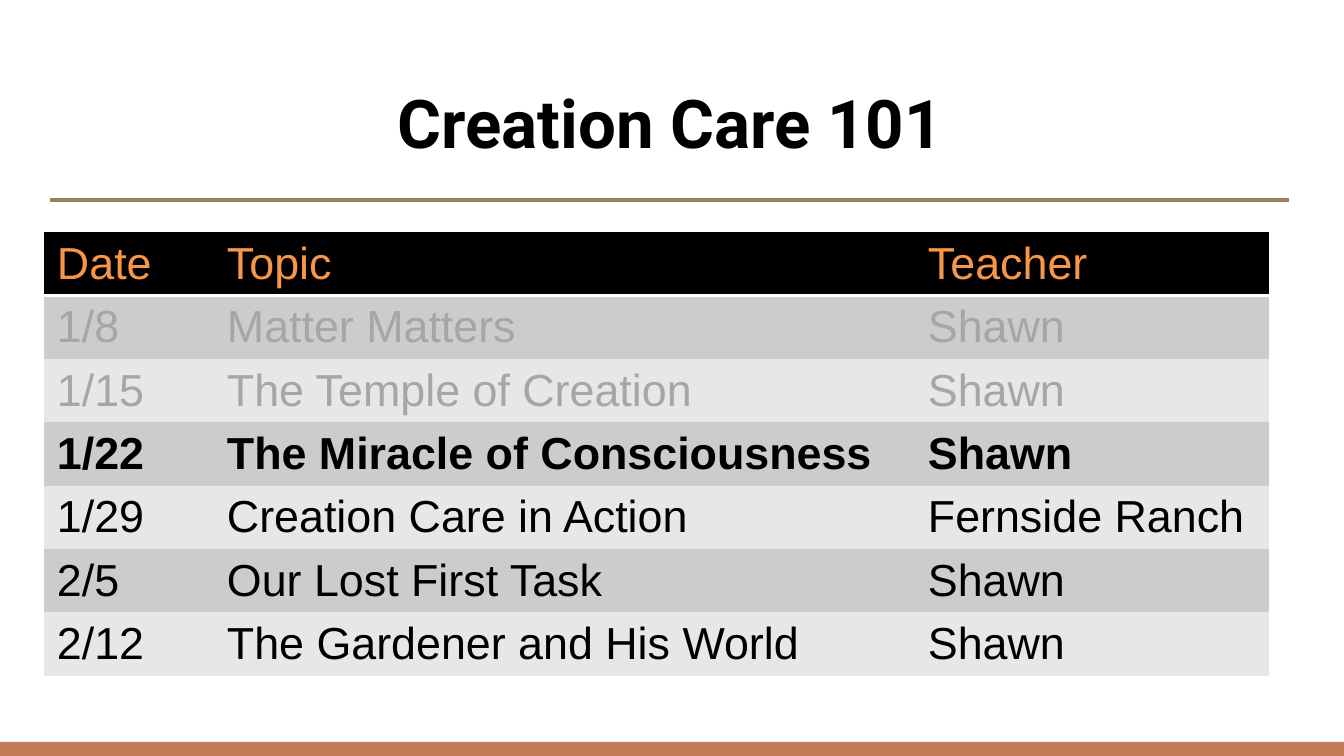
import pptx
import pptx.dml.color
import pptx.enum.shapes
import pptx.enum.text
import pptx.oxml
import pptx.oxml.ns
import pptx.util

RGBColor = pptx.dml.color.RGBColor
BLACK = RGBColor(0x00, 0x00, 0x00)
WHITE = RGBColor(0xFF, 0xFF, 0xFF)
ORANGE = RGBColor(0xF7, 0x96, 0x46)
PAST_GRAY = RGBColor(0xA6, 0xA6, 0xA6)
DARK_BAND = RGBColor(0xCC, 0xCC, 0xCC)
LIGHT_BAND = RGBColor(0xE7, 0xE7, 0xE7)
TAN = RGBColor(0x98, 0x81, 0x5D)
TERRACOTTA = RGBColor(0xC3, 0x7C, 0x56)

PX_PER_INCH = 134.4
SLIDE_WIDTH, SLIDE_HEIGHT = 1344, 756
NO_STYLE_NO_GRID = "{2D5ABB26-0587-4C30-8999-92F81FD0307C}"

HEADER = ("Date", "Topic", "Teacher")
PAST_CLASSES = [
    ("1/8", "Matter Matters", "Shawn"),
    ("1/15", "The Temple of Creation", "Shawn"),
]
CURRENT_CLASS = ("1/22", "The Miracle of Consciousness", "Shawn")
COMING_CLASSES = [
    ("1/29", "Creation Care in Action", "Fernside Ranch"),
    ("2/5", "Our Lost First Task", "Shawn"),
    ("2/12", "The Gardener and His World", "Shawn"),
]
COLUMN_WIDTHS = (170, 701, 354)
TABLE_HEIGHT = 444


def px(length):
    return pptx.util.Emu(round(length * pptx.util.Inches(1) / PX_PER_INCH))


def add_run(paragraph, text, font_name, size, color, bold=False):
    run = paragraph.add_run()
    run.text = text
    run.font.name = font_name
    run.font.size = pptx.util.Pt(size)
    run.font.color.rgb = color
    run.font.bold = bold


def set_title(slide, text):
    title = slide.shapes.title
    title.left, title.top, title.width, title.height = map(px, (44, 68, 1253, 84))
    frame = title.text_frame
    frame.word_wrap = True
    frame.auto_size = pptx.enum.text.MSO_AUTO_SIZE.NONE
    frame.vertical_anchor = pptx.enum.text.MSO_ANCHOR.TOP
    frame.margin_left = frame.margin_right = px(13)
    frame.margin_top = frame.margin_bottom = px(13)
    paragraph = frame.paragraphs[0]
    paragraph.alignment = pptx.enum.text.PP_ALIGN.CENTER
    add_run(paragraph, text, "Roboto", 36, BLACK, bold=True)


def add_bar(slide, left, top, width, height, color):
    bar = slide.shapes.add_shape(
        pptx.enum.shapes.MSO_SHAPE.RECTANGLE, *map(px, (left, top, width, height)))
    bar.shadow.inherit = False
    bar.fill.solid()
    bar.fill.fore_color.rgb = color
    bar.line.fill.background()


def add_rule(slide, left, right, y, color, width):
    rule = slide.shapes.add_connector(
        pptx.enum.shapes.MSO_CONNECTOR.STRAIGHT, px(left), px(y), px(right), px(y))
    rule.line.color.rgb = color
    rule.line.width = pptx.util.Pt(width)
    properties = rule._element.spPr
    properties.append(properties.makeelement(pptx.oxml.ns.qn("a:effectLst"), {}))


def add_bottom_border(cell, color, width):
    border = pptx.oxml.parse_xml(
        f'<a:lnB {pptx.oxml.ns.nsdecls("a")} w="{pptx.util.Pt(width)}">'
        f'<a:solidFill><a:srgbClr val="{color}"/></a:solidFill></a:lnB>')
    # Borders come before the fill in cell properties
    cell._tc.get_or_add_tcPr().insert(0, border)


def fill_cell(cell, text, fill, color, bold):
    cell.margin_left = cell.margin_right = px(13)
    cell.margin_top = cell.margin_bottom = px(6)
    cell.vertical_anchor = pptx.enum.text.MSO_ANCHOR.MIDDLE
    cell.fill.solid()
    cell.fill.fore_color.rgb = fill
    add_run(cell.text_frame.paragraphs[0], text, "Arial", 24, color, bold)


def add_schedule(slide, left, top):
    # Each row carries its text color and weight
    rows = [(HEADER, ORANGE, False)]
    rows += [(row, PAST_GRAY, False) for row in PAST_CLASSES]
    rows += [(CURRENT_CLASS, BLACK, True)]
    rows += [(row, BLACK, False) for row in COMING_CLASSES]

    table = slide.shapes.add_table(
        len(rows), len(COLUMN_WIDTHS), px(left), px(top),
        px(sum(COLUMN_WIDTHS)), px(TABLE_HEIGHT)).table
    table.horz_banding = False
    table._tbl.tblPr.find(pptx.oxml.ns.qn("a:tableStyleId")).text = NO_STYLE_NO_GRID
    for column, width in zip(table.columns, COLUMN_WIDTHS):
        column.width = px(width)

    for row_index, (texts, color, bold) in enumerate(rows):
        table.rows[row_index].height = px(TABLE_HEIGHT / len(rows))
        band = DARK_BAND if row_index % 2 else LIGHT_BAND
        fill = band if row_index else BLACK
        for column_index, text in enumerate(texts):
            cell = table.cell(row_index, column_index)
            fill_cell(cell, text, fill, color, bold)
            if row_index == 0:
                add_bottom_border(cell, WHITE, 2)


def main():
    presentation = pptx.Presentation()
    presentation.slide_width = px(SLIDE_WIDTH)
    presentation.slide_height = px(SLIDE_HEIGHT)
    slide = presentation.slides.add_slide(presentation.slide_layouts[5])

    # Frame: footer bar and rule under the title
    add_bar(slide, 0, 742, SLIDE_WIDTH, SLIDE_HEIGHT - 742, TERRACOTTA)
    add_rule(slide, 50, 1289, 200, TAN, 2.25)

    # Title and class schedule
    set_title(slide, "Creation Care 101")
    add_schedule(slide, 44, 232)

    presentation.save("out.pptx")


if __name__ == "__main__":
    main()
